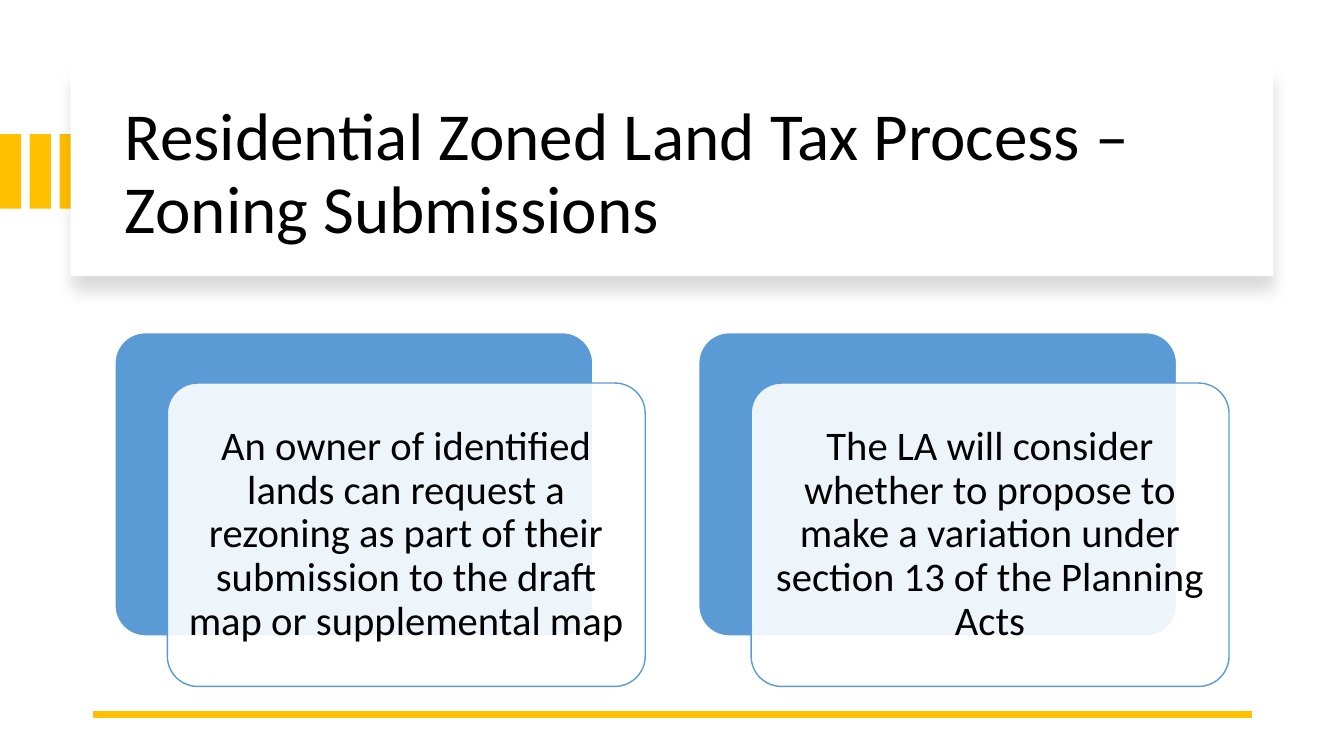
from dataclasses import dataclass

from lxml.etree import SubElement
from pptx import Presentation
from pptx.dml.color import RGBColor
from pptx.enum.shapes import MSO_CONNECTOR as CONNECTOR, MSO_SHAPE as SHAPE
from pptx.enum.text import MSO_ANCHOR as ANCHOR, PP_ALIGN as ALIGN
from pptx.oxml.ns import qn
from pptx.util import Inches, Pt


@dataclass(frozen=True)
class Theme:
    font: str = "Calibri"
    black: str = "000000"
    white: str = "FFFFFF"
    gold: str = "FFC000"
    blue: str = "5B9BD5"
    title_size: int = 48
    card_size: int = 29


THEME = Theme()
TITLE = "Residential Zoned Land Tax Process – Zoning Submissions"
CARDS = (
    "An owner of identified lands can request a rezoning as part of their "
    "submission to the draft map or supplemental map",
    "The LA will consider whether to propose to make a variation under "
    "section 13 of the Planning Acts",
)


def add_text(slide, text, left, top, width, height, *, size,
             align=ALIGN.LEFT, inset_x=0.1, inset_y=0.05, space_after=0):
    frame = slide.shapes.add_textbox(
        Inches(left), Inches(top), Inches(width), Inches(height)).text_frame
    frame.word_wrap = True
    frame.vertical_anchor = ANCHOR.MIDDLE
    frame.margin_left = frame.margin_right = Inches(inset_x)
    frame.margin_top = frame.margin_bottom = Inches(inset_y)
    paragraph = frame.paragraphs[0]
    paragraph.alignment = align
    paragraph.line_spacing = 0.9
    paragraph.space_after = Pt(space_after)
    run = paragraph.add_run()
    run.text = text
    run.font.name = THEME.font
    run.font.size = Pt(size)
    run.font.color.rgb = RGBColor.from_string(THEME.black)


def add_panel(slide, kind, left, top, width, height, fill, line=None):
    panel = slide.shapes.add_shape(
        kind, Inches(left), Inches(top), Inches(width), Inches(height))
    panel.shadow.inherit = False
    panel.fill.solid()
    panel.fill.fore_color.rgb = RGBColor.from_string(fill)
    if line:
        panel.line.color.rgb = RGBColor.from_string(line)
        panel.line.width = Pt(1)
    else:
        panel.line.fill.background()
    if kind == SHAPE.ROUNDED_RECTANGLE:
        panel.adjustments[0] = 0.1
    return panel


def add_alpha(color, percent):
    SubElement(color, qn("a:alpha"), val=str(percent * 1000))


def add_drop_shadow(panel):
    effects = panel._element.spPr.find(qn("a:effectLst"))
    shadow = SubElement(
        effects, qn("a:outerShdw"), blurRad=str(Pt(11)), dist=str(Pt(10)),
        dir="5400000", algn="t", rotWithShape="0")
    add_alpha(SubElement(shadow, qn("a:srgbClr"), val=THEME.black), 15)


def add_rule(slide, left, right, y):
    rule = slide.shapes.add_connector(
        CONNECTOR.STRAIGHT, Inches(right), Inches(y), Inches(left), Inches(y))
    rule.line.color.rgb = RGBColor.from_string(THEME.gold)
    rule.line.width = Pt(4.5)
    SubElement(rule._element.spPr, qn("a:effectLst"))


def add_card(slide, text, left, top):
    width, height = 4.74, 3.01
    front_left, front_top, inset = left + 0.52, top + 0.5, 0.09
    add_panel(slide, SHAPE.ROUNDED_RECTANGLE, left, top, width, height,
              THEME.blue, THEME.white)
    front = add_panel(slide, SHAPE.ROUNDED_RECTANGLE, front_left, front_top,
                      width, height, THEME.white, THEME.blue)
    add_alpha(front._element.spPr.find(qn("a:solidFill"))[0], 90)
    add_text(slide, text, front_left + inset, front_top + inset,
             width - 2 * inset, height - 2 * inset, size=THEME.card_size,
             align=ALIGN.CENTER, inset_x=0.12, inset_y=0.12, space_after=10)


def main():
    deck = Presentation()
    deck.slide_width, deck.slide_height = Inches(13.33), Inches(7.5)
    slide = deck.slides.add_slide(deck.slide_layouts[6])

    for index in range(3):
        add_panel(slide, SHAPE.RECTANGLE, index * 0.295, 1.33, 0.21, 0.74, THEME.gold)
    banner = add_panel(slide, SHAPE.RECTANGLE, 0.7, 0.67, 11.93, 2.07, THEME.white)
    add_drop_shadow(banner)
    add_text(slide, TITLE, 1.14, 0.89, 11.13, 1.7,
             size=THEME.title_size, space_after=6)
    add_rule(slide, 0.92, 12.42, 7.09)
    for index, text in enumerate(CARDS):
        add_card(slide, text, 1.14 + index * 5.79, 3.3)

    deck.save("out.pptx")


if __name__ == "__main__":
    main()
